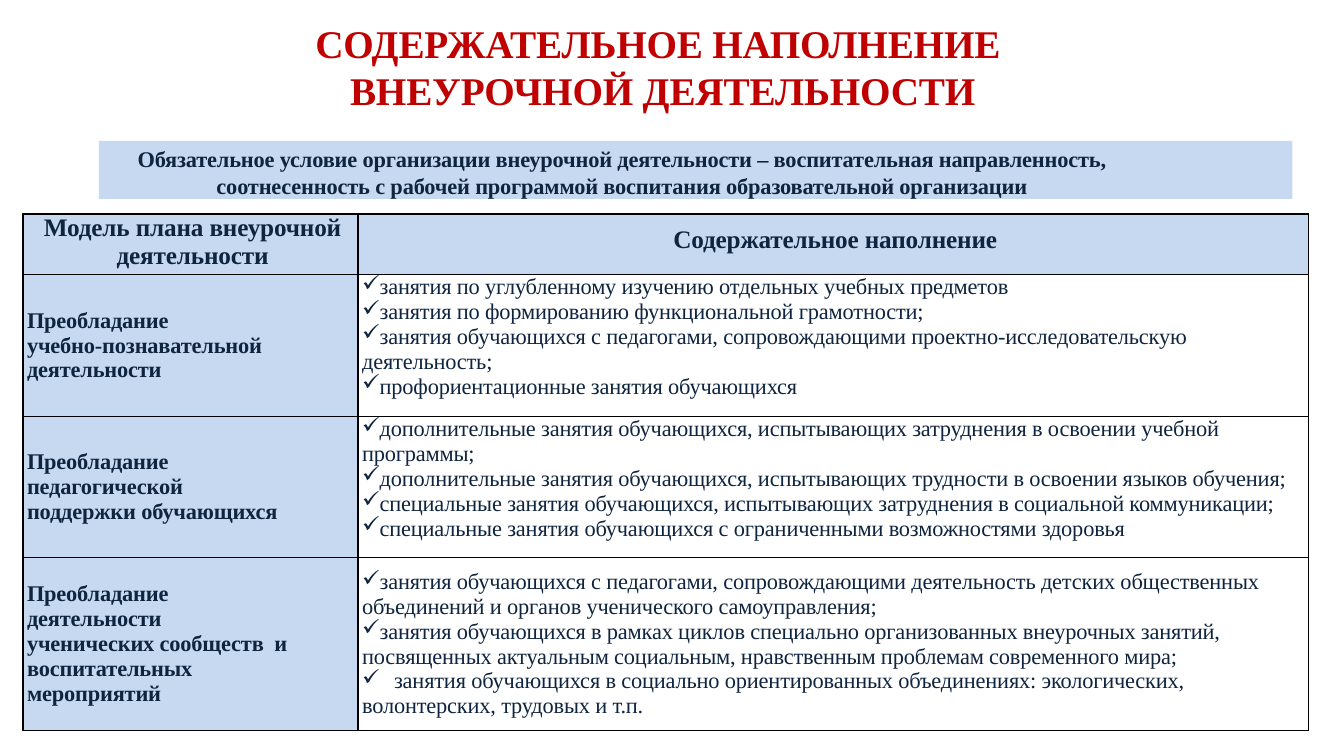
"""Build the slide on the content of extracurricular activities."""
from lxml import etree
from pptx import Presentation
from pptx import util as u
from pptx.dml.color import RGBColor
from pptx.enum import shapes, text
from pptx.oxml.ns import qn

COLORS = {"title": "C00000", "ink": "0F243E", "panel": "C6D9F1", "line": "000000"}
HEADER = (["Модель плана внеурочной", "деятельности"], ["Содержательное наполнение"])
MODELS = [
    (["Преобладание", "учебно-познавательной деятельности"],
     ["✓занятия по углубленному изучению отдельных учебных предметов",
      "✓занятия по формированию функциональной грамотности;",
      "✓занятия обучающихся с педагогами, сопровождающими "
      "проектно-исследовательскую деятельность;",
      "✓профориентационные занятия обучающихся"], 0),
    (["Преобладание", "педагогической", "поддержки обучающихся"],
     ["✓дополнительные занятия обучающихся, испытывающих затруднения в освоении учебной",
      "программы;",
      "✓дополнительные занятия обучающихся, испытывающих трудности в освоении языков обучения;",
      "✓специальные занятия обучающихся, испытывающих затруднения в социальной коммуникации;",
      "✓специальные занятия обучающихся с ограниченными возможностями здоровья"], 0),
    (["Преобладание", "деятельности", "ученических сообществ  и воспитательных мероприятий"],
     ["✓занятия обучающихся с педагогами, сопровождающими деятельность детских "
      "общественных объединений и органов ученического самоуправления;",
      "✓занятия обучающихся в рамках циклов специально организованных внеурочных занятий,",
      "посвященных актуальным социальным, нравственным проблемам современного мира;",
      "✓\tзанятия обучающихся в социально ориентированных объединениях: экологических, "
      "волонтерских, трудовых и т.п."], 12),
]


class Slide:
    """Holds the style and the current slide."""

    def __init__(self, prs, font="Times New Roman"):
        self.s = prs.slides.add_slide(prs.slide_layouts[6])
        self.font = font

    def px(self, *values):
        return [u.Emu(round(v * 914400 / 100.8)) for v in values]

    def color(self, name):
        return RGBColor.from_string(COLORS[name])

    def add_lines(self, tf, lines, size, color="ink", bold=False, align="LEFT", indent=0):
        for i, line in enumerate(lines):
            p = tf.paragraphs[0] if i == 0 else tf.add_paragraph()
            p.text = line.removeprefix("✓")
            p.alignment = text.PP_ALIGN[align]
            pPr = p._p.get_or_add_pPr()
            pPr.set("marL", str(self.px(indent)[0]))
            pPr.set("indent", "0")
            if line.startswith("✓"):
                etree.SubElement(pPr, qn("a:buChar"), char="✓")
                tabs = etree.SubElement(pPr, qn("a:tabLst"))
                etree.SubElement(tabs, qn("a:tab"), pos=str(self.px(36)[0]), algn="l")
            for r in p.runs:
                r.font.name, r.font.size, r.font.bold = self.font, u.Pt(size), bold
                r.font.color.rgb = self.color(color)
                r._r.get_or_add_rPr().set("spc", "-10")

    def frame(self, tf, top=0, right=0):
        tf.word_wrap = True
        tf.vertical_anchor = text.MSO_ANCHOR.TOP
        tf.margin_left, tf.margin_top, tf.margin_right, tf.margin_bottom = self.px(0, top, right, 0)
        return tf

    def title(self, box, line):
        sp = self.s.shapes.add_textbox(*self.px(*box))
        self.add_lines(self.frame(sp.text_frame, top=1), [line], 28, "title", True, "CENTER", 1)
        sp.text_frame.paragraphs[0].space_before = u.Pt(1)

    def banner(self, box, line):
        sp = self.s.shapes.add_shape(shapes.MSO_SHAPE.RECTANGLE, *self.px(*box))
        sp.shadow.inherit = False
        sp.fill.solid()
        sp.fill.fore_color.rgb = self.color("panel")
        sp.line.fill.background()
        tf = self.frame(sp.text_frame, top=4, right=147)
        self.add_lines(tf, [line], 16, bold=True, align="CENTER")

    def table(self, box, widths, heights):
        table = self.s.shapes.add_table(len(heights), len(widths), *self.px(*box)).table
        for column, width in zip(table.columns, self.px(*widths)):
            column.width = width
        for row, height in zip(table.rows, self.px(*heights)):
            row.height = height
        return table

    def cell(self, cell, lines, size=16, filled=False, middle=False, top=0, right=0, **style):
        tcPr = cell._tc.get_or_add_tcPr()
        for side in ("lnL", "lnR", "lnT", "lnB"):
            ln = etree.SubElement(tcPr, qn(f"a:{side}"), w=str(u.Pt(1)))
            fill = etree.SubElement(ln, qn("a:solidFill"))
            etree.SubElement(fill, qn("a:srgbClr"), val=COLORS["line"])
        if filled:
            cell.fill.solid()
            cell.fill.fore_color.rgb = self.color("panel")
        else:
            cell.fill.background()
        cell.margin_left, cell.margin_top, cell.margin_right, cell.margin_bottom = self.px(0, top, right, 0)
        cell.vertical_anchor = text.MSO_ANCHOR.MIDDLE if middle else text.MSO_ANCHOR.TOP
        self.add_lines(cell.text_frame, lines, size, indent=4, **style)


def main():
    prs = Presentation()
    prs.slide_width, prs.slide_height = u.Inches(13.33), u.Inches(7.5)
    slide = Slide(prs)
    slide.title((25, 18, 1274, 97), "СОДЕРЖАТЕЛЬНОЕ НАПОЛНЕНИЕ \vВНЕУРОЧНОЙ ДЕЯТЕЛЬНОСТИ")
    slide.banner((99, 141, 1193, 58),
                 "Обязательное условие организации внеурочной деятельности – воспитательная "
                 "направленность, соотнесенность с рабочей программой воспитания "
                 "образовательной организации")
    table = slide.table((23, 214, 1285, 516), (335, 950), (60, 142, 141, 173))
    for col, (lines, top) in enumerate(zip(HEADER, (0, 12))):
        slide.cell(table.cell(0, col), lines, 18, filled=True, top=top, bold=True, align="CENTER")
    for row, (model, content, top) in enumerate(MODELS, 1):
        slide.cell(table.cell(row, 0), model, filled=True, middle=True, right=45, bold=True)
        slide.cell(table.cell(row, 1), content, top=top)
    prs.save("out.pptx")


if __name__ == "__main__":
    main()
